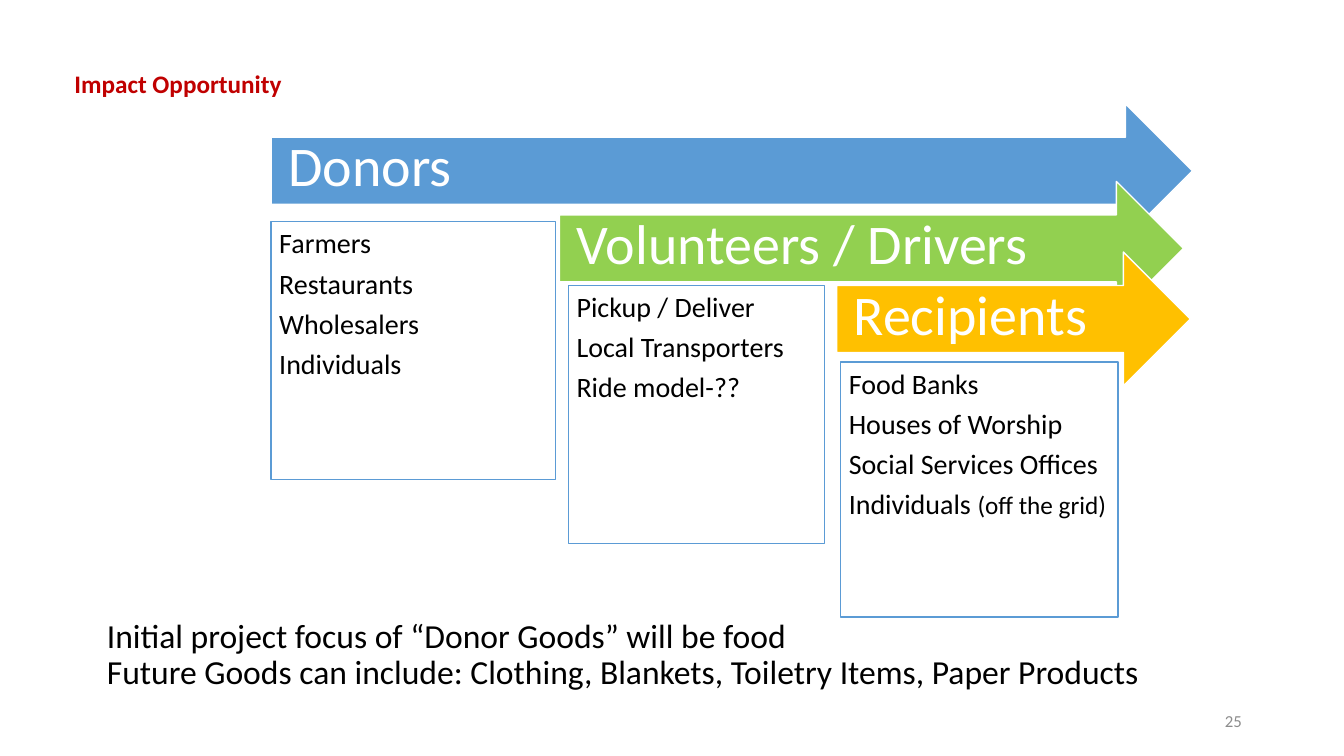
import pptx
import pptx.dml.color
import pptx.enum.shapes
import pptx.enum.text
import pptx.util

EMU_PER_PX = 9144  # 100 px to the inch
SHAPES = pptx.enum.shapes.MSO_SHAPE
ALIGN = pptx.enum.text.PP_ALIGN
ANCHOR = pptx.enum.text.MSO_ANCHOR


def px(length):
    return pptx.util.Emu(length * EMU_PER_PX)


def colour(hex_string):
    return pptx.dml.color.RGBColor.from_string(hex_string)


class PageBuilder:
    font = "Calibri"
    black, white, blue, red, grey = "000000", "FFFFFF", "5B9BD5", "C00000", "8C8C8C"
    arrow_insets = (17, 17, 28, 21)
    panel_insets = (8, 8, 8, 8)

    def __init__(self, page):
        self.page = page

    def span(self, para, text, size, hex_string, bold=False):
        span = para.add_run()
        span.text = text
        span.font.name = self.font
        span.font.size = pptx.util.Pt(size)
        span.font.bold = bold
        span.font.color.rgb = colour(hex_string)

    def frame(self, box, anchor, insets=(10, 5, 10, 5)):
        frame = box.text_frame
        frame.word_wrap = True
        frame.auto_size = pptx.enum.text.MSO_AUTO_SIZE.NONE
        frame.vertical_anchor = anchor
        (frame.margin_left, frame.margin_top,
         frame.margin_right, frame.margin_bottom) = map(px, insets)
        return frame

    def title(self, place, lines):
        box = self.page.shapes.title
        box.left, box.top, box.width, box.height = map(px, place)
        para = self.frame(box, ANCHOR.MIDDLE).paragraphs[0]
        para.alignment = ALIGN.LEFT
        para.line_spacing = 0.9
        for index, line in enumerate(lines):
            if index:
                para.add_line_break()
            self.span(para, line, 24, self.black)

    def label(self, place, text, size, hex_string, align, anchor, bold=False):
        box = self.page.shapes.add_textbox(*map(px, place))
        para = self.frame(box, anchor).paragraphs[0]
        para.alignment = align
        self.span(para, text, size, hex_string, bold)

    def shape(self, kind, place, fill, line):
        box = self.page.shapes.add_shape(kind, *map(px, place))
        box.shadow.inherit = False
        box.fill.solid()
        box.fill.fore_color.rgb = colour(fill)
        box.line.color.rgb = colour(line)
        box.line.width = pptx.util.Pt(1)
        return box

    def arrow(self, place, fill, heading):
        box = self.shape(SHAPES.RIGHT_ARROW, place, fill, self.white)
        para = self.frame(box, ANCHOR.MIDDLE, self.arrow_insets).paragraphs[0]
        para.alignment = ALIGN.LEFT
        para.line_spacing = 0.9
        self.span(para, heading, 40, self.white)

    def panel(self, place, items):
        box = self.shape(SHAPES.RECTANGLE, place, self.white, self.blue)
        frame = self.frame(box, ANCHOR.TOP, self.panel_insets)
        for index, spans in enumerate(items):
            para = frame.add_paragraph() if index else frame.paragraphs[0]
            para.alignment = ALIGN.LEFT
            para.line_spacing = 0.9
            para.space_after = pptx.util.Pt(7)
            for text, size in spans:
                self.span(para, text, size, self.black)


def main():
    deck = pptx.Presentation()
    deck.slide_width = pptx.util.Inches(13.333)
    deck.slide_height = pptx.util.Inches(7.5)
    page = deck.slides.add_slide(deck.slide_layouts[5])
    builder = PageBuilder(page)

    # Closing statement and page number
    builder.title((96, 578, 1150, 145), [
        "Initial project focus of “Donor Goods” will be food",
        "Future Goods can include: Clothing, Blankets, Toiletry Items, Paper Products",
    ])
    builder.label((942, 695, 300, 40), "25", 12, builder.grey, ALIGN.RIGHT, ANCHOR.MIDDLE)

    # Stages: arrow with heading, then the panel below it
    stages = [
        ("Donors", builder.blue, (269, 103, 914, 133), (269, 220, 282, 256),
         [[("Farmers", 20)], [("Restaurants", 20)],
          [("Wholesalers", 20)], [("Individuals", 20)]]),
        ("Volunteers / Drivers", "92D050", (555, 180, 619, 133), (564, 283, 254, 256),
         [[("Pickup / Deliver", 20)], [("Local Transporters", 20)],
          [("Ride model-??", 20)]]),
        ("Recipients", "FFC000", (830, 250, 351, 133), (834, 359, 275, 253),
         [[("Food Banks", 20)], [("Houses of Worship", 20)],
          [("Social Services Offices", 20)],
          [("Individuals ", 20), ("(off the grid)", 18)]]),
    ]
    for heading, fill, arrow_place, panel_place, items in stages:
        builder.arrow(arrow_place, fill, heading)
        builder.panel(panel_place, items)

    # Section heading
    builder.label((64, 63, 434, 40), "Impact Opportunity", 18, builder.red,
                  ALIGN.LEFT, ANCHOR.TOP, bold=True)

    deck.save("out.pptx")


if __name__ == "__main__":
    main()
